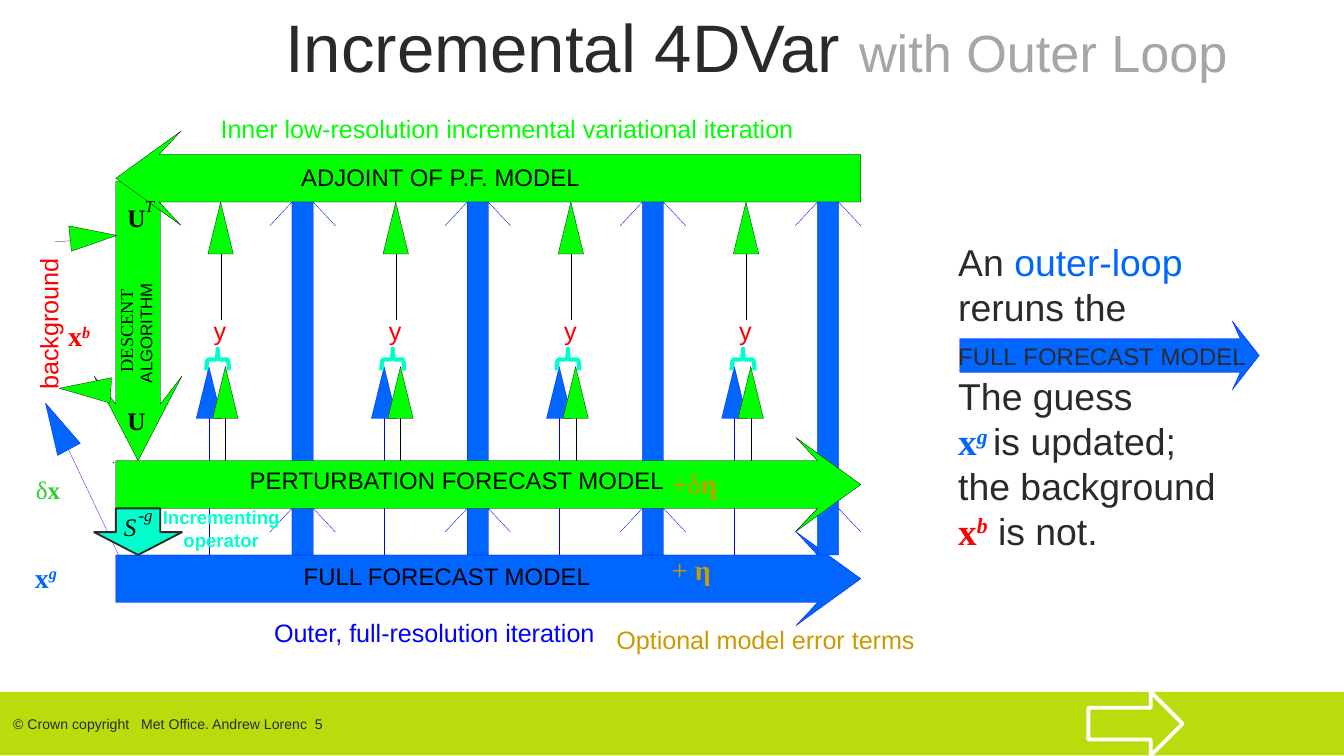
from dataclasses import dataclass

from lxml.etree import SubElement
from pptx import Presentation
from pptx.dml.color import RGBColor
from pptx.enum.shapes import MSO_CONNECTOR as Connector, MSO_SHAPE as Preset
from pptx.enum.text import MSO_ANCHOR as Anchor, MSO_AUTO_SIZE as AutoSize, PP_ALIGN as Align
from pptx.oxml.ns import qn
from pptx.util import Cm, Pt


@dataclass(frozen=True)
class Theme:
    # Colours
    ink: str = "2A2A2A"
    black: str = "000000"
    white: str = "FFFFFF"
    grey: str = "A6A6A6"
    inner: str = "00FF00"
    outer: str = "0066FF"
    outer_line: str = "0000FF"
    observed: str = "FF0000"
    increment: str = "00FFCC"
    delta: str = "33CC33"
    error: str = "CC9900"
    band: str = "B9DC0C"
    # Fonts and type sizes
    sans: str = "Arial"
    serif: str = "Times New Roman"
    title: float = 36
    subtitle: float = 28
    body: float = 20
    small_caps: float = 16
    symbol: float = 15
    label: float = 13.5
    model: float = 12.8
    descent: float = 9.8
    operator: float = 10
    tiny: float = 9
    footer: float = 7.5
    hairline: float = 0.13


class Diagram:
    def __init__(self, slide, theme):
        self.slide, self.theme = slide, theme

    def run(self, text, size, color, font=None, bold=False, italic=False, **attributes):
        """Describe one run; attributes go straight to the run properties."""
        return text, size, color, font or self.theme.sans, bold, italic, attributes

    def add_runs(self, paragraph, runs):
        for text, size, color, font, bold, italic, attributes in runs:
            lines = text.split("\n")
            for number, line in enumerate(lines):
                if number:
                    paragraph.add_line_break()
                if not line:
                    continue
                run = paragraph.add_run()
                run.text = line
                run.font.size, run.font.name = Pt(size), font
                run.font.bold, run.font.italic = bold, italic
                run.font.color.rgb = RGBColor.from_string(color)
                for key, value in attributes.items():
                    run.font._element.set(key, value)

    def text(self, box, *runs, insets=(0.25, 0.13), anchor=Anchor.TOP, align=Align.LEFT,
             wrap=True, turn=0, spacing=None):
        shape = self.slide.shapes.add_textbox(*map(Cm, box))
        shape.rotation = turn
        frame = shape.text_frame
        frame.word_wrap, frame.auto_size = wrap, AutoSize.SHAPE_TO_FIT_TEXT
        frame.margin_left = frame.margin_right = Cm(insets[0])
        frame.margin_top = frame.margin_bottom = Cm(insets[1])
        frame.vertical_anchor = anchor
        paragraph = frame.paragraphs[0]
        paragraph.alignment = align
        if spacing:
            paragraph.line_spacing = spacing
        self.add_runs(paragraph, runs)

    def label(self, box, *style, turn=0, **options):
        self.text(box, self.run(*style, **options), insets=(0, 0), wrap=False,
                  turn=turn, spacing=0.85)

    def paint(self, shape, fill=None, line=None, width=None):
        shape.shadow.inherit = False
        if fill:
            shape.fill.solid()
            shape.fill.fore_color.rgb = RGBColor.from_string(fill)
        else:
            shape.fill.background()
        if line:
            shape.line.color.rgb = RGBColor.from_string(line)
            shape.line.width = Pt(width or self.theme.hairline)
        else:
            shape.line.fill.background()
        return shape

    def preset(self, kind, box, turn=0, **style):
        shape = self.slide.shapes.add_shape(kind, *map(Cm, box))
        shape.rotation = turn
        return self.paint(shape, **style)

    def outline(self, points, fill, line, width=None):
        first, *rest = [(Cm(x), Cm(y)) for x, y in points]
        builder = self.slide.shapes.build_freeform(*first)
        builder.add_line_segments(rest, close=True)
        self.paint(builder.convert_to_shape(), fill, line, width)

    def block_arrow(self, tail, tip, axis, neck, barb, body, head, *style, vertical=False):
        """neck and barb are distances back from the tip; body and head are half widths."""
        sign = 1 if tip > tail else -1
        neck, barb = tip - sign * neck, tip - sign * barb
        points = [(tail, axis - body), (neck, axis - body), (barb, axis - head), (tip, axis),
                  (barb, axis + head), (neck, axis + body), (tail, axis + body)]
        self.outline([(y, x) for x, y in points] if vertical else points, *style)

    def line(self, x1, y1, x2, y2, color):
        line = self.slide.shapes.add_connector(Connector.STRAIGHT, *map(Cm, (x1, y1, x2, y2)))
        line.line.color.rgb = RGBColor.from_string(color)
        line.line.width = Pt(self.theme.hairline)
        SubElement(line._element.spPr, qn("a:effectLst"))

    def spike(self, x, top, start, fill, line):
        """Thin upward arrow with a tall triangular head."""
        base = top + 0.98
        self.line(x, start, x, base, line)
        self.outline([(x, top), (x - 0.24, base), (x + 0.24, base)], fill, line)

    def pillar(self, x, top, bottom, fill, line):
        """Column carrying a pair of thin barbs at each model it reaches."""
        left = [(x - 0.2, bottom)]
        for joint in (9.61, top):
            left += [(x - 0.2, joint), (x - 0.62, joint + 0.45), (x - 0.2, joint)]
        right = [(2 * x - px, py) for px, py in reversed(left)]
        self.outline(left + right, fill, line)


def main():
    theme = Theme()
    presentation = Presentation()
    presentation.slide_width, presentation.slide_height = Cm(25.4), Cm(14.29)
    slide = presentation.slides.add_slide(presentation.slide_layouts[6])
    art = Diagram(slide, theme)
    run = art.run
    inner, outer = (theme.inner, theme.black), (theme.outer, theme.outer_line)

    def symbol(letter, power, color, size):
        return (run(letter, size, color, theme.serif, bold=True),
                run(power, size, color, theme.serif, bold=True, italic=True, baseline="30000"))

    # Title
    art.text((5.21, 0, 20.19, 1.73), run("Incremental 4DVar ", theme.title, theme.ink),
             run("with Outer Loop", theme.subtitle, theme.grey), insets=(0.18, 0.1))

    # Descent, adjoint and full forecast arrows
    model_arrow = (0.82, 1.23, 0.45, 0.89)
    art.block_arrow(3.43, 8.71, 2.61, 1.07, 1.6, 0.42, 0.83, *inner, vertical=True)
    art.block_arrow(16.27, 2.19, 3.37, *model_arrow, *inner)
    art.line(2.24, 10.49, 1.3, 8.51, theme.outer_line)
    art.outline([(0.86, 7.62), (1.09, 8.61), (1.52, 8.38)], *outer)
    art.block_arrow(2.19, 16.27, 10.94, *model_arrow, *outer)

    # Four observation times
    pitch = 3.31
    for time in range(4):
        shift = time * pitch
        art.label((4.04 + shift, 6.05, 0.23, 0.48), "y", theme.label, theme.observed)
        art.spike(3.95 + shift, 6.93, 10.49, *outer)
        art.spike(4.26 + shift, 6.93, 8.71, *inner)
        art.spike(4.17 + shift, 3.82, 6.05, *inner)
        art.pillar(5.72 + shift, 3.82, 10.49, *outer)
        art.preset(Preset.RIGHT_BRACE, (3.91 + shift, 6.58, 0.41, 0.43), turn=270,
                   line=theme.increment, width=2.25)

    # Perturbation forecast and incrementing operator
    art.block_arrow(2.19, 16.27, 9.16, *model_arrow, *inner)
    art.block_arrow(9.61, 10.49, 2.61, 0.43, 0.43, 0.42, 0.83,
                    theme.increment, theme.ink, 1, vertical=True)

    # Background arrows
    art.line(2.13, 8.74, 2.16, 8.74, theme.black)
    art.outline([(1.12, 7.34), (2.08, 7.62), (2.11, 7.14)], *inner)
    art.line(1.04, 4.57, 1.35, 4.55, theme.black)
    art.outline([(2.21, 4.45), (1.3, 4.27), (1.35, 4.75)], *inner)

    # Model names and iteration captions
    for box, name in (((5.74, 10.69, 5.44, 0.46), "FULL FORECAST MODEL"),
                      ((4.72, 8.89, 7.85, 0.46), "PERTURBATION FORECAST MODEL"),
                      ((5.69, 3.15, 5.28, 0.46), "ADJOINT OF P.F. MODEL")):
        art.label(box, name, theme.model, theme.black)
    art.label((4.17, 2.24, 10.97, 0.48), "Inner low-resolution incremental variational iteration",
              theme.label, theme.inner)
    art.label((5.18, 11.76, 6.15, 0.48), "Outer, full-resolution iteration",
              theme.label, theme.outer_line)
    art.label((1.63, 6.07, 1.57, 0.36), "DESCENT", theme.descent, theme.black, theme.serif, turn=270)
    art.label((1.83, 6.12, 1.91, 0.33), "ALGORITHM", theme.tiny, theme.black, turn=270)
    art.label((-0.3, 5.87, 2.51, 0.48), "background", theme.label, theme.observed, turn=270)

    # Operators on the descent and increment arrows
    for top in (3.91, 7.75):
        art.label((2.41, top, 0.36, 0.48), "U", theme.label, theme.black, theme.serif, bold=True)
    for box, name, size in (((2.74, 3.76, 0.18, 0.33), "T", theme.tiny),
                            ((2.34, 9.75, 0.23, 0.48), "S", theme.label),
                            ((2.62, 9.6, 0.33, 0.33), "-g", theme.tiny)):
        art.label(box, name, size, theme.black, theme.serif, italic=True)
    art.text((2.62, 9.37, 3.12, 1.24),
             run("Incrementing operator", theme.operator, theme.increment, bold=True),
             insets=(0.2, 0.2), anchor=Anchor.MIDDLE, align=Align.CENTER)

    # State vectors and model error terms
    art.text((0.41, 10.46, 1.04, 0.89), *symbol("x", "g", theme.outer, theme.symbol))
    art.text((1.04, 5.89, 1.04, 0.89), *symbol("x", "b", theme.observed, theme.symbol))
    for box, plain, strong, size, color in (
            ((0.43, 8.84, 1.04, 0.84), "δ", "x", theme.label, theme.delta),
            ((12.45, 8.69, 1.8, 0.89), "+δ", "η", theme.symbol, theme.error),
            ((12.45, 10.31, 1.8, 0.89), "+ ", "η", theme.symbol, theme.error)):
        art.text(box, run(plain, size, color, theme.serif),
                 run(strong, size, color, theme.serif, bold=True))
    art.text((11.4, 11.68, 6.22, 0.84),
             run("Optional model error terms", theme.label, theme.error))

    # Outer loop explanation
    art.block_arrow(18.14, 23.8, 6.72, 0.36, 0.51, 0.32, 0.65, *outer)
    art.text((17.91, 4.29, 6.22, 6.38),
             run("An ", theme.body, theme.ink),
             run("outer-loop", theme.body, theme.outer),
             run(" reruns the \n", theme.body, theme.ink),
             run("full forecast model", theme.small_caps, theme.ink, cap="small"),
             run(" \nThe guess\n", theme.body, theme.ink),
             *symbol("x", "g ", theme.outer, theme.body),
             run("is updated; \nthe background \n", theme.body, theme.ink),
             *symbol("x", "b", theme.observed, theme.body),
             run(" is not.", theme.body, theme.ink),
             insets=(0.2, 0.2), anchor=Anchor.MIDDLE)

    # Footer
    footer = art.preset(Preset.RECTANGLE, (0, 13.08, 25.4, 1.2), fill=theme.band).text_frame
    footer.vertical_anchor = Anchor.MIDDLE
    footer.paragraphs[0].alignment = Align.LEFT
    art.add_runs(footer.paragraphs[0], [run("© Crown copyright   Met Office. Andrew Lorenc  5",
                                            theme.footer, theme.ink)])
    art.preset(Preset.RIGHT_ARROW, (20.57, 13.08, 1.78, 1.2),
               fill=theme.band, line=theme.white, width=2)

    presentation.save("out.pptx")


if __name__ == "__main__":
    main()
